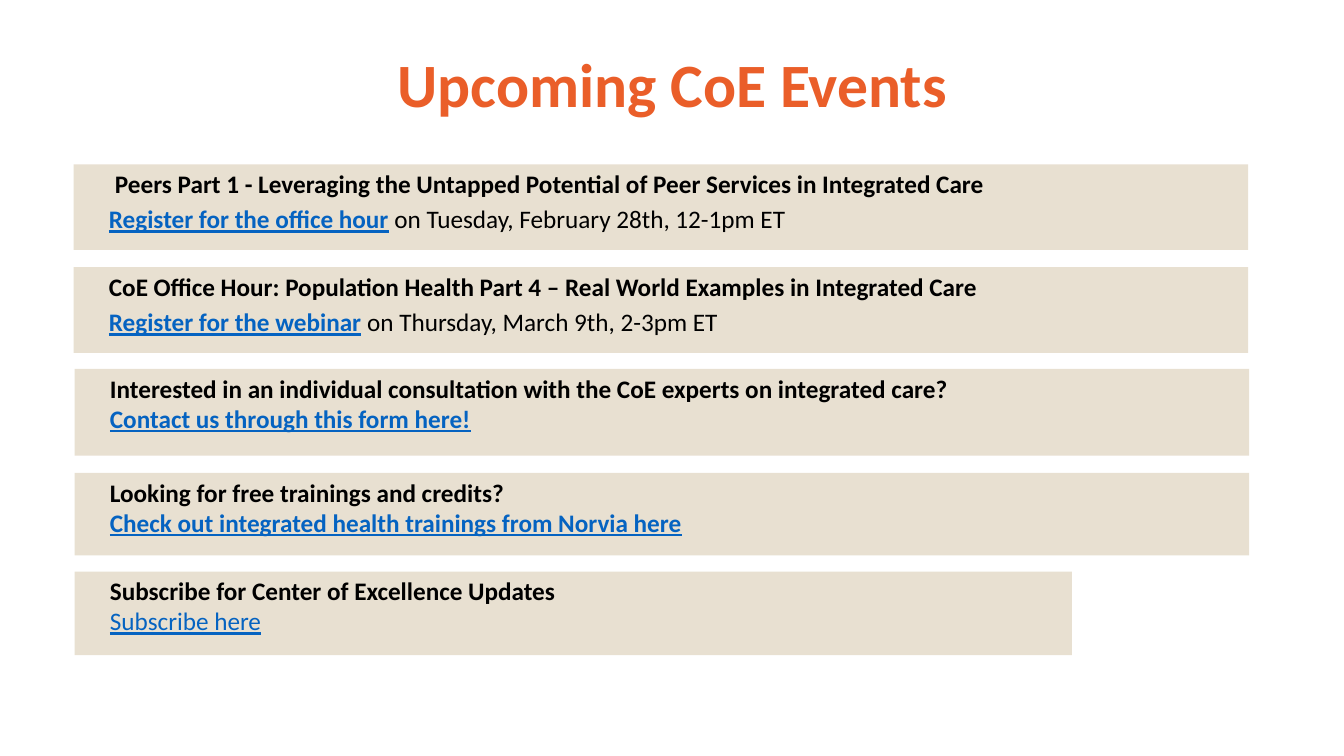
from dataclasses import dataclass

from pptx import Presentation
from pptx.dml.color import RGBColor
from pptx.enum.shapes import MSO_SHAPE
from pptx.enum.text import MSO_ANCHOR, PP_ALIGN
from pptx.util import Inches, Pt

RECT = MSO_SHAPE.RECTANGLE
TOP, MIDDLE = MSO_ANCHOR.TOP, MSO_ANCHOR.MIDDLE
LEFT, CENTER = PP_ALIGN.LEFT, PP_ALIGN.CENTER


@dataclass(frozen=True)
class Theme:
    font: str = "Calibri"
    title: RGBColor = RGBColor(0xEA, 0x5E, 0x29)
    band: RGBColor = RGBColor(0xE8, 0xE0, 0xD1)
    ink: RGBColor = RGBColor(0, 0, 0)
    link: RGBColor = RGBColor(0x05, 0x63, 0xC1)
    title_size: int = 44
    text_size: int = 18


THEME = Theme()
INDENT = 0.28
WIDE = 11.65

# left, top, width, height, heading, heading indent, link, bold link, date, gap
EVENTS = [
    (0.73, 1.63, WIDE, 0.85,
     "Peers Part 1 - Leveraging the Untapped Potential of Peer Services in Integrated Care",
     0.34, "Register for the office hour", True,
     " on Tuesday, February 28th, 12-1pm ET", 3.6),
    (0.73, 2.65, WIDE, 0.85,
     "CoE Office Hour: Population Health Part 4 – Real World Examples in Integrated Care",
     INDENT, "Register for the webinar", True,
     " on Thursday, March 9th, 2-3pm ET", 3.6),
    (0.74, 3.66, WIDE, 0.86,
     "Interested in an individual consultation with the CoE experts on integrated care?",
     INDENT, "Contact us through this form here!", True, "", 0),
    (0.74, 4.69, WIDE, 0.82,
     "Looking for free trainings and credits?",
     INDENT, "Check out integrated health trainings from Norvia here", True, "", 0),
    (0.74, 5.67, 9.89, 0.83,
     "Subscribe for Center of Excellence Updates",
     INDENT, "Subscribe here", False, "", 0),
]


def style(run, size, color, bold=False, line=False):
    font = run.font
    font.name, font.size, font.bold = THEME.font, Pt(size), bold
    font.underline = line
    font.color.rgb = color


def set_para(para, indent, gap=0):
    props = para._p.get_or_add_pPr()
    props.set("marL", str(Inches(indent)))
    props.set("indent", "0")
    para.alignment = LEFT
    para.space_before = Pt(gap)


def add_title(slide, text):
    title = slide.shapes.title
    title.left, title.top = Inches(0.77), Inches(0.1)
    title.width, title.height = Inches(11.8), Inches(1.45)
    frame = title.text_frame
    frame.text = text
    frame.vertical_anchor = MIDDLE
    para = frame.paragraphs[0]
    para.alignment = CENTER
    style(para.runs[0], THEME.title_size, THEME.title, True)


def add_band(slide, left, top, width, height):
    band = slide.shapes.add_shape(
        RECT, Inches(left), Inches(top), Inches(width), Inches(height))
    band.shadow.inherit = False
    band.fill.solid()
    band.fill.fore_color.rgb = THEME.band
    band.line.fill.background()
    frame = band.text_frame
    frame.word_wrap = True
    frame.vertical_anchor = TOP
    frame.margin_left = frame.margin_right = Inches(0.07)
    frame.margin_top = frame.margin_bottom = Inches(0.04)
    return frame


def add_event(slide, left, top, width, height, head, indent, link, bold, date, gap):
    frame = add_band(slide, left, top, width, height)
    size = THEME.text_size

    # Heading line
    frame.text = head
    first = frame.paragraphs[0]
    set_para(first, indent)
    style(first.runs[0], size, THEME.ink, True)

    # Link line, with its date if there is one
    second = frame.add_paragraph()
    second.text = link
    set_para(second, INDENT, gap)
    style(second.runs[0], size, THEME.link, bold, True)
    if date:
        run = second.add_run()
        run.text = date
        style(run, size, THEME.ink)


def main():
    deck = Presentation()
    deck.slide_width, deck.slide_height = Inches(13.33), Inches(7.5)
    slide = deck.slides.add_slide(deck.slide_layouts[5])
    add_title(slide, "Upcoming CoE Events")
    for event in EVENTS:
        add_event(slide, *event)
    deck.save("out.pptx")


if __name__ == "__main__":
    main()
